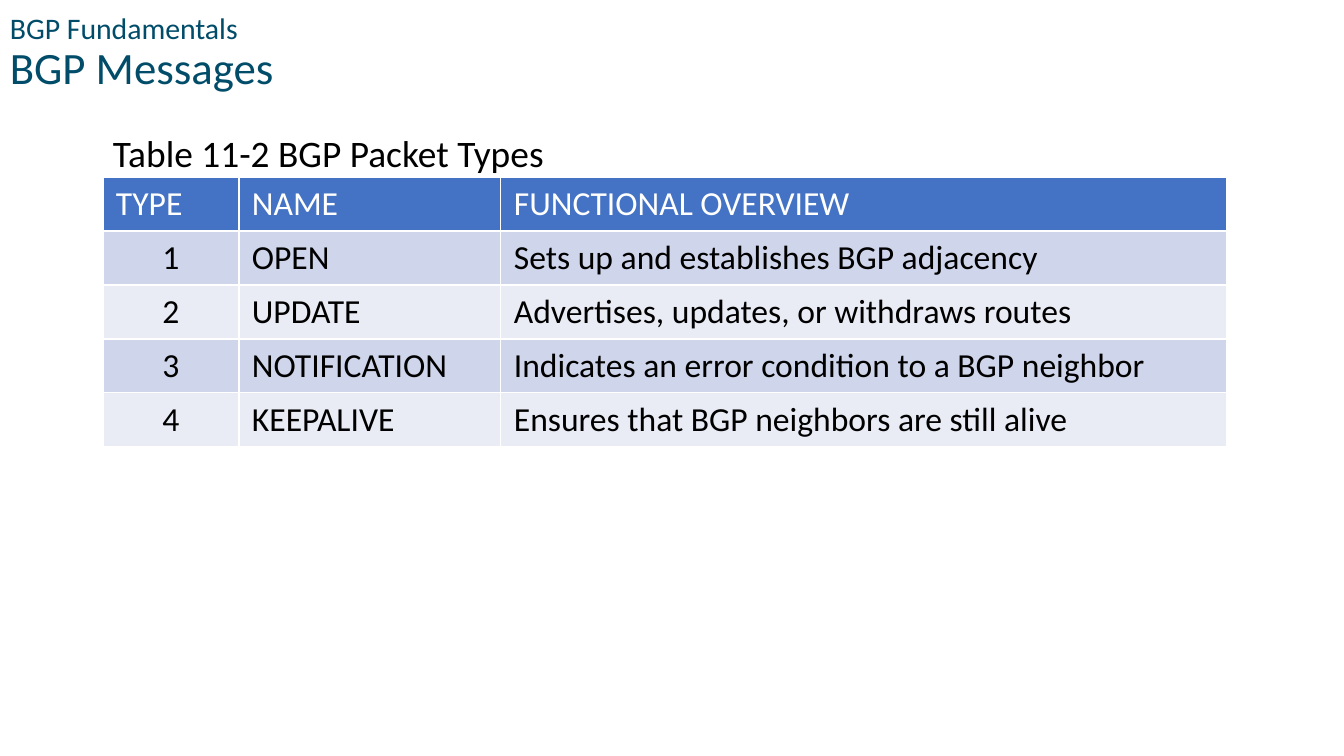
import pptx
import pptx.dml.color
import pptx.enum.text
import pptx.util

RGBColor = pptx.dml.color.RGBColor
ALIGN = pptx.enum.text.PP_ALIGN
ANCHOR = pptx.enum.text.MSO_ANCHOR

TEAL = RGBColor(0x00, 0x4C, 0x69)
BLACK = RGBColor(0x00, 0x00, 0x00)
WHITE = RGBColor(0xFF, 0xFF, 0xFF)
HEADER_BLUE = RGBColor(0x44, 0x72, 0xC4)
BAND_DARK = RGBColor(0xCF, 0xD5, 0xEA)
BAND_LIGHT = RGBColor(0xE9, 0xEB, 0xF5)

FONT = "Calibri"
PX_PER_INCH = 100.8
ROW_HEIGHT = 54
COLUMN_WIDTHS = (136, 262, 726)
PACKET_TYPES = (
    ("TYPE", "NAME", "FUNCTIONAL OVERVIEW"),
    ("1", "OPEN", "Sets up and establishes BGP adjacency"),
    ("2", "UPDATE", "Advertises, updates, or withdraws routes"),
    ("3", "NOTIFICATION", "Indicates an error condition to a BGP neighbor"),
    ("4", "KEEPALIVE", "Ensures that BGP neighbors are still alive"),
)


def px(length):
    return pptx.util.Emu(round(length * 914400 / PX_PER_INCH))


def set_font(font, size, color):
    font.name = FONT
    font.size = pptx.util.Pt(size)
    font.bold = False
    font.color.rgb = color


def add_text_box(page, left, top, width, height, anchor):
    box = page.shapes.add_textbox(px(left), px(top), px(width), px(height))
    frame = box.text_frame
    frame.word_wrap = True
    frame.vertical_anchor = anchor
    return frame.paragraphs[0]


def add_title(page, left, top, width, height):
    para = add_text_box(page, left, top, width, height, ANCHOR.MIDDLE)
    para.line_spacing = 0.9
    # Small topic line above the large heading
    topic = para.add_run()
    topic.text = "BGP Fundamentals"
    set_font(topic.font, 21.3, TEAL)
    para.add_line_break()
    heading = para.add_run()
    heading.text = "BGP Messages"
    set_font(heading.font, 32, TEAL)


def add_packet_table(page, left, top, caption_height):
    # Caption, overlapping the table's top edge slightly
    caption = add_text_box(page, left, top, 791, caption_height, ANCHOR.TOP)
    caption.text = "Table 11-2 BGP Packet Types"
    set_font(caption.font, 26.7, BLACK)

    # Table
    table = page.shapes.add_table(
        len(PACKET_TYPES), len(COLUMN_WIDTHS), px(left), px(top + caption_height - 4),
        px(sum(COLUMN_WIDTHS)), px(ROW_HEIGHT * len(PACKET_TYPES))).table
    for column, width in zip(table.columns, COLUMN_WIDTHS):
        column.width = px(width)
    for row_index, texts in enumerate(PACKET_TYPES):
        is_header = row_index == 0
        band = BAND_DARK if row_index % 2 else BAND_LIGHT
        for column_index, text in enumerate(texts):
            cell = table.cell(row_index, column_index)
            cell.fill.solid()
            cell.fill.fore_color.rgb = HEADER_BLUE if is_header else band
            cell.margin_left = cell.margin_right = px(13)
            cell.margin_top, cell.margin_bottom = px(7), px(6)
            para = cell.text_frame.paragraphs[0]
            para.text = text
            set_font(para.font, 24, WHITE if is_header else BLACK)
            if column_index == 0 and not is_header:
                para.alignment = ALIGN.CENTER


def main():
    deck = pptx.Presentation()
    deck.slide_width, deck.slide_height = px(1344), px(756)
    page = deck.slides.add_slide(deck.slide_layouts[6])
    add_title(page, 0, 0, 1227, 108)
    add_packet_table(page, 103, 125, 56)
    deck.save("out.pptx")


if __name__ == "__main__":
    main()
